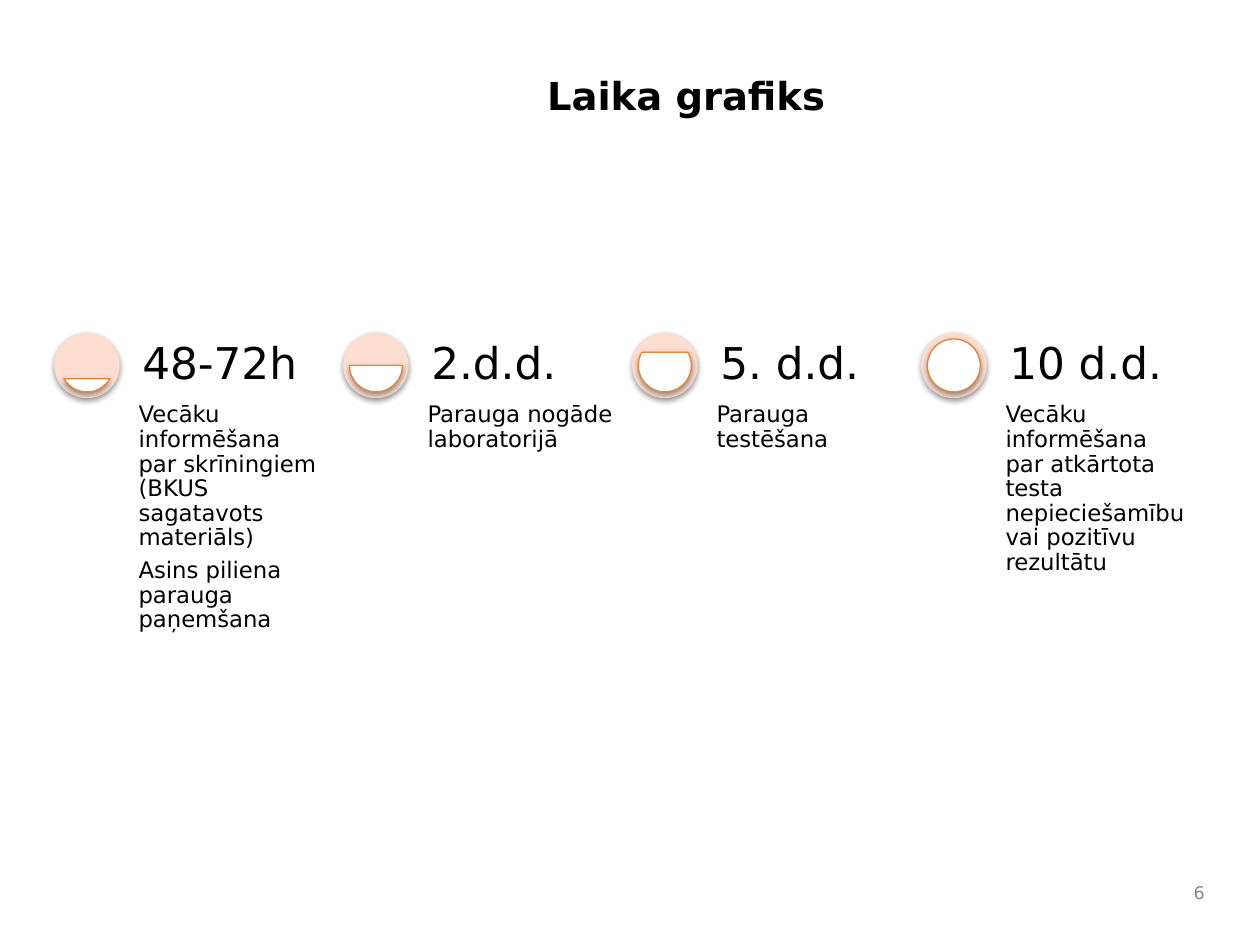
import math
from dataclasses import dataclass

from lxml import etree
from pptx import Presentation
from pptx import util as u
from pptx.dml.color import RGBColor
from pptx.enum import shapes, text
from pptx.oxml.ns import qn


@dataclass(frozen=True)
class Theme:
    font: str = "DejaVu Sans"
    ink: str = "000000"
    muted: str = "898989"
    disc: str = "FCDDCF"
    level: str = "FFFFFF"
    outline: str = "E08840"
    title: int = 22
    heading: int = 25
    body: int = 13
    number: int = 10


class Deck:
    """Holds the theme and the current slide."""

    def __init__(self, prs, theme):
        self.theme = theme
        self.s = prs.slides.add_slide(prs.slide_layouts[5])

    def set_text(self, sp, paragraphs, size, color=None, align=text.PP_ALIGN.LEFT,
                 anchor=text.MSO_ANCHOR.TOP, inset=(0.1, 0.05), bold=False, tight=False):
        tf = sp.text_frame
        tf.word_wrap = True
        tf.auto_size = text.MSO_AUTO_SIZE.NONE
        tf.vertical_anchor = anchor
        tf.margin_left = tf.margin_right = u.Inches(inset[0])
        tf.margin_top = tf.margin_bottom = u.Inches(inset[1])
        tf.text = "\n".join(paragraphs)
        for p in tf.paragraphs:
            p.alignment = align
            if tight:
                p.line_spacing = 0.9
                p.space_after = u.Pt(size * 0.35)
            for r in p.runs:
                r.font.name = self.theme.font
                r.font.size = u.Pt(size)
                r.font.bold = bold
                r.font.color.rgb = RGBColor.from_string(color or self.theme.ink)

    def title(self, words, left, top, width, height):
        sp = self.s.shapes.title
        sp.left, sp.top, sp.width, sp.height = map(u.Inches, (left, top, width, height))
        self.set_text(sp, [words], self.theme.title, align=text.PP_ALIGN.CENTER,
                      anchor=text.MSO_ANCHOR.MIDDLE, bold=True)

    def label(self, paragraphs, left, top, width, height, size, **style):
        sp = self.s.shapes.add_textbox(*map(u.Inches, (left, top, width, height)))
        self.set_text(sp, paragraphs, size, **style)

    def round_shape(self, kind, left, top, size, fill, line=None):
        sp = self.s.shapes.add_shape(kind, *map(u.Inches, (left, top, size, size)))
        sp.fill.solid()
        sp.fill.fore_color.rgb = RGBColor.from_string(fill)
        if line:
            sp.line.color.rgb = RGBColor.from_string(line)
            sp.line.width = u.Pt(0.75)
        else:
            sp.line.fill.background()
        self.soft_shadow(sp)
        return sp

    def soft_shadow(self, sp):
        sp.shadow.inherit = False
        effects = sp._element.spPr.find(qn("a:effectLst"))
        shadow = etree.SubElement(effects, qn("a:outerShdw"), blurRad="40000",
                                  dist="20000", dir="5400000", rotWithShape="0")
        color = etree.SubElement(shadow, qn("a:srgbClr"), val=self.theme.ink)
        etree.SubElement(color, qn("a:alpha"), val="38000")

    def gauge(self, left, top, size, share):
        """Disc with a chord filled from the bottom up to the given share."""
        inset = 0.05
        self.round_shape(shapes.MSO_SHAPE.OVAL, left, top, size, self.theme.disc)
        chord = self.round_shape(shapes.MSO_SHAPE.CHORD, left + inset, top + inset,
                                 size - 2 * inset, self.theme.level, self.theme.outline)
        angle = round(math.degrees(math.asin(1 - 2 * share)))
        # One degree is 60000 units, and an adjustment of 1 is 100000 units
        chord.adjustments[0] = angle % 360 * 0.6
        chord.adjustments[1] = (180 - angle) * 0.6

    def milestone(self, left, top, share, heading, details):
        size, text_left, text_width = 0.52, left + 0.63, 1.55
        self.gauge(left, top, size, share)
        self.label(details, text_left, top + size, text_width, 2.21, self.theme.body,
                   inset=(0.04, 0.04), tight=True)
        self.label([heading], text_left, top, text_width, size, self.theme.heading,
                   anchor=text.MSO_ANCHOR.BOTTOM, inset=(0.07, 0.07), tight=True)


MILESTONES = [
    ("48-72h", ["Vecāku informēšana par skrīningiem (BKUS sagatavots materiāls)",
                "Asins piliena parauga paņemšana"]),
    ("2.d.d.", ["Parauga nogāde laboratorijā"]),
    ("5. d.d.", ["Parauga testēšana"]),
    ("10 d.d.", ["Vecāku informēšana par atkārtota testa nepieciešamību "
                 "vai pozitīvu rezultātu"]),
]


def main():
    prs = Presentation()
    prs.slide_width, prs.slide_height = u.Inches(10), u.Inches(7.5)
    theme = Theme()
    deck = Deck(prs, theme)

    # Title and slide number
    deck.title("Laika grafiks", 2.11, 0.19, 6.67, 1.13)
    deck.label(["6"], 9.33, 6.92, 0.33, 0.33, theme.number, color=theme.muted,
               align=text.PP_ALIGN.RIGHT, anchor=text.MSO_ANCHOR.MIDDLE)

    # Timeline: equal columns, each gauge one step fuller
    first, last, count = 0.43, 7.31, len(MILESTONES)
    pitch = (last - first) / (count - 1)
    for i, (heading, details) in enumerate(MILESTONES):
        deck.milestone(first + i * pitch, 2.64, (i + 1) / count, heading, details)

    prs.save("out.pptx")


if __name__ == "__main__":
    main()
